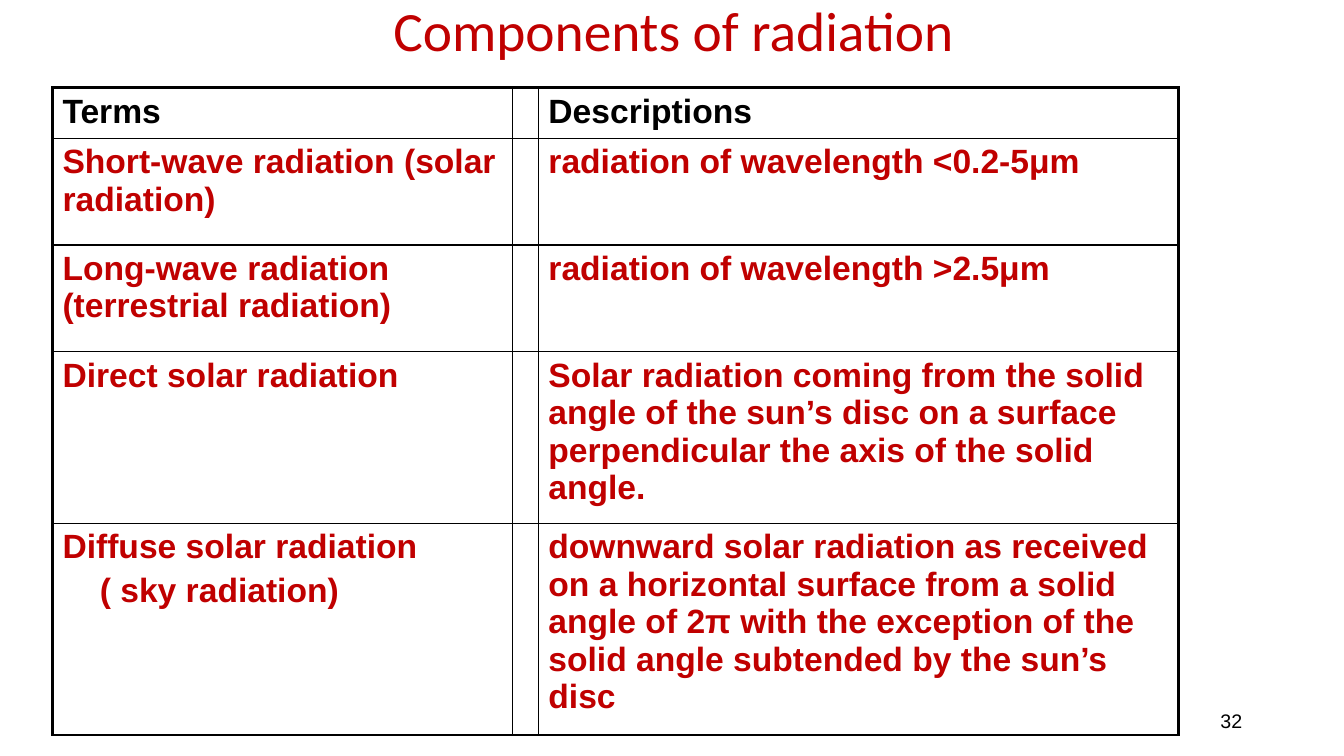
from lxml import etree
from pptx import Presentation
from pptx.dml.color import RGBColor
from pptx.enum.text import MSO_ANCHOR, PP_ALIGN
from pptx.oxml.ns import qn
from pptx.util import Inches, Pt

MIDDLE = MSO_ANCHOR.MIDDLE
CENTER, RIGHT = PP_ALIGN.CENTER, PP_ALIGN.RIGHT
RED = RGBColor(0xC0, 0x00, 0x00)
BLACK = RGBColor(0x00, 0x00, 0x00)

TITLE = "Components of radiation"
PAGE = "32"
ROWS = [
    (["Terms"], "Descriptions"),
    (["Short-wave radiation (solar radiation)"],
     "radiation of wavelength <0.2-5μm"),
    (["Long-wave radiation (terrestrial radiation)"],
     "radiation of wavelength >2.5μm"),
    (["Direct solar radiation"],
     "Solar radiation coming from the solid angle of the sun’s disc on a "
     "surface perpendicular the axis of the solid angle."),
    (["Diffuse solar radiation", "( sky radiation)"],
     "downward solar radiation as received on a horizontal surface from a "
     "solid angle of 2π with the exception of the solid angle subtended by "
     "the sun’s disc"),
]
COL_WIDTHS = [4.56, 0.26, 6.35]
ROW_HEIGHTS = [0.5, 1.06, 1.06, 1.7, 2.1]
THIN, THICK = 1, 2.25


def style(p, size, font, color, bold=False):
    p.font.size = Pt(size)
    p.font.name = font
    p.font.color.rgb = color
    p.font.bold = bold


def add_text(s, text, box, size, font, color, align, inset):
    tf = s.shapes.add_textbox(*map(Inches, box)).text_frame
    tf.word_wrap = True
    tf.vertical_anchor = MIDDLE
    tf.margin_left = tf.margin_right = Inches(inset)
    tf.margin_top = tf.margin_bottom = 0
    p = tf.paragraphs[0]
    p.text = text
    p.alignment = align
    style(p, size, font, color)
    return p


def set_borders(cell, widths):
    tcPr = cell._tc.get_or_add_tcPr()
    for i, (side, width) in enumerate(widths.items()):
        ln = etree.Element(qn("a:ln" + side), w=str(Pt(width)))
        fill = etree.SubElement(ln, qn("a:solidFill"))
        etree.SubElement(fill, qn("a:srgbClr"), val=str(BLACK))
        tcPr.insert(i, ln)


def fill_cell(cell, lines, color):
    cell.fill.background()
    tf = cell.text_frame
    for i, line in enumerate(lines):
        p = tf.add_paragraph() if i else tf.paragraphs[0]
        p.text = line
        if i:
            p.space_before = Pt(4.8)
            p._p.get_or_add_pPr().set("marL", str(Inches(0.37)))
        style(p, 24, "Arial", color, True)


def add_terms_table(s):
    frame = s.shapes.add_table(
        len(ROWS), len(COL_WIDTHS), Inches(0.52), Inches(0.87),
        Inches(sum(COL_WIDTHS)), Inches(sum(ROW_HEIGHTS)))
    table = frame.table
    table.first_row = table.horz_banding = False
    for col, width in zip(table.columns, COL_WIDTHS):
        col.width = Inches(width)
    last_row, last_col = len(ROWS) - 1, len(COL_WIDTHS) - 1
    for r, (terms, description) in enumerate(ROWS):
        table.rows[r].height = Inches(ROW_HEIGHTS[r])
        for c, lines in enumerate([terms, [""], [description]]):
            cell = table.cell(r, c)
            fill_cell(cell, lines, RED if r else BLACK)
            outer = {"L": c == 0, "R": c == last_col,
                     "T": r == 0, "B": r == last_row}
            set_borders(cell, {side: THICK if edge else THIN
                               for side, edge in outer.items()})


def main():
    prs = Presentation()
    prs.slide_width, prs.slide_height = Inches(13.33), Inches(7.5)
    s = prs.slides.add_slide(prs.slide_layouts[6])
    title = add_text(s, TITLE, (0.28, 0.04, 12.8, 0.58), 39.6, "Calibri",
                     RED, CENTER, 0)
    title.line_spacing = 0.9
    add_terms_table(s)
    add_text(s, PAGE, (9.42, 6.95, 3, 0.4), 14, "Arial", BLACK, RIGHT, 0.1)
    prs.save("out.pptx")


if __name__ == "__main__":
    main()
